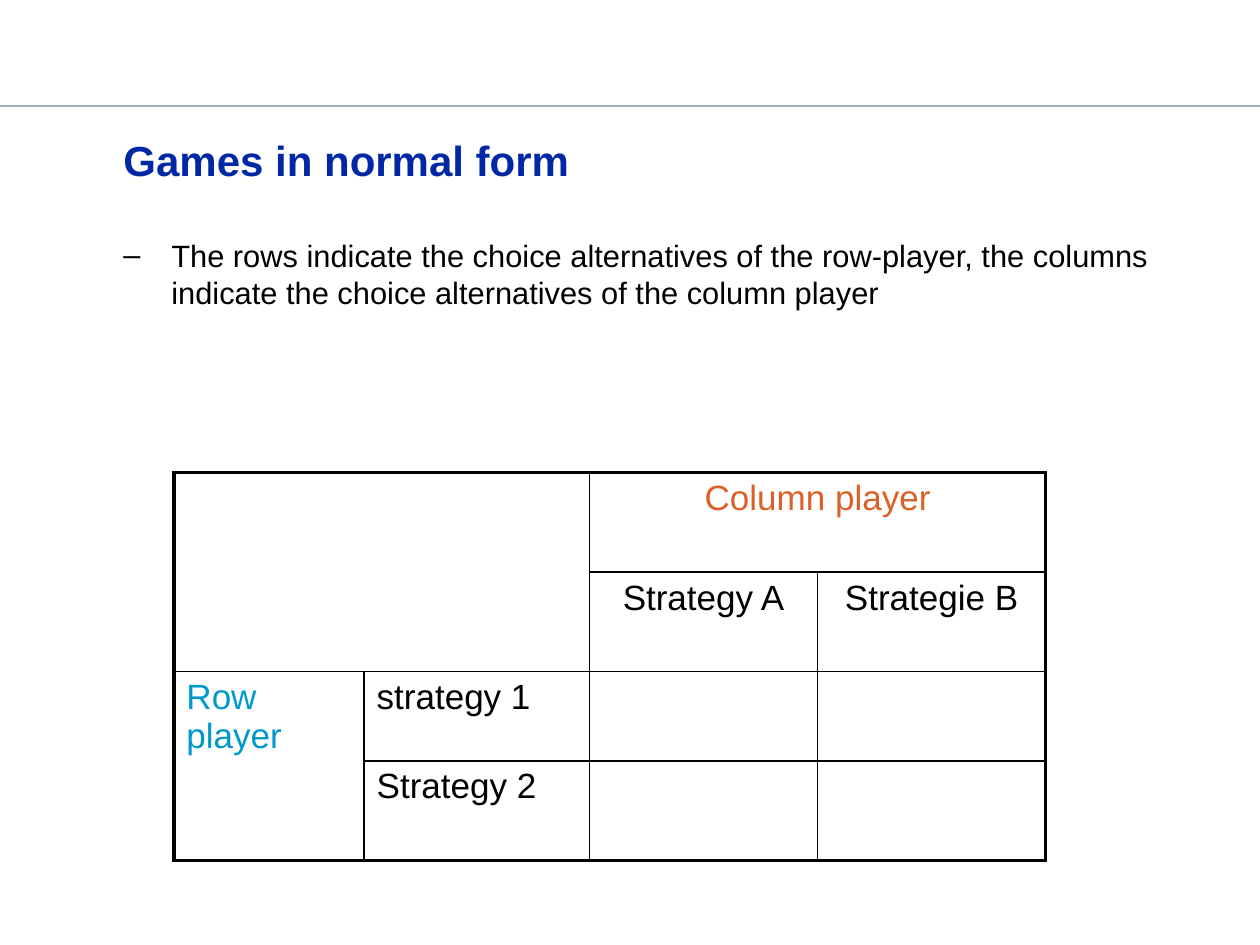
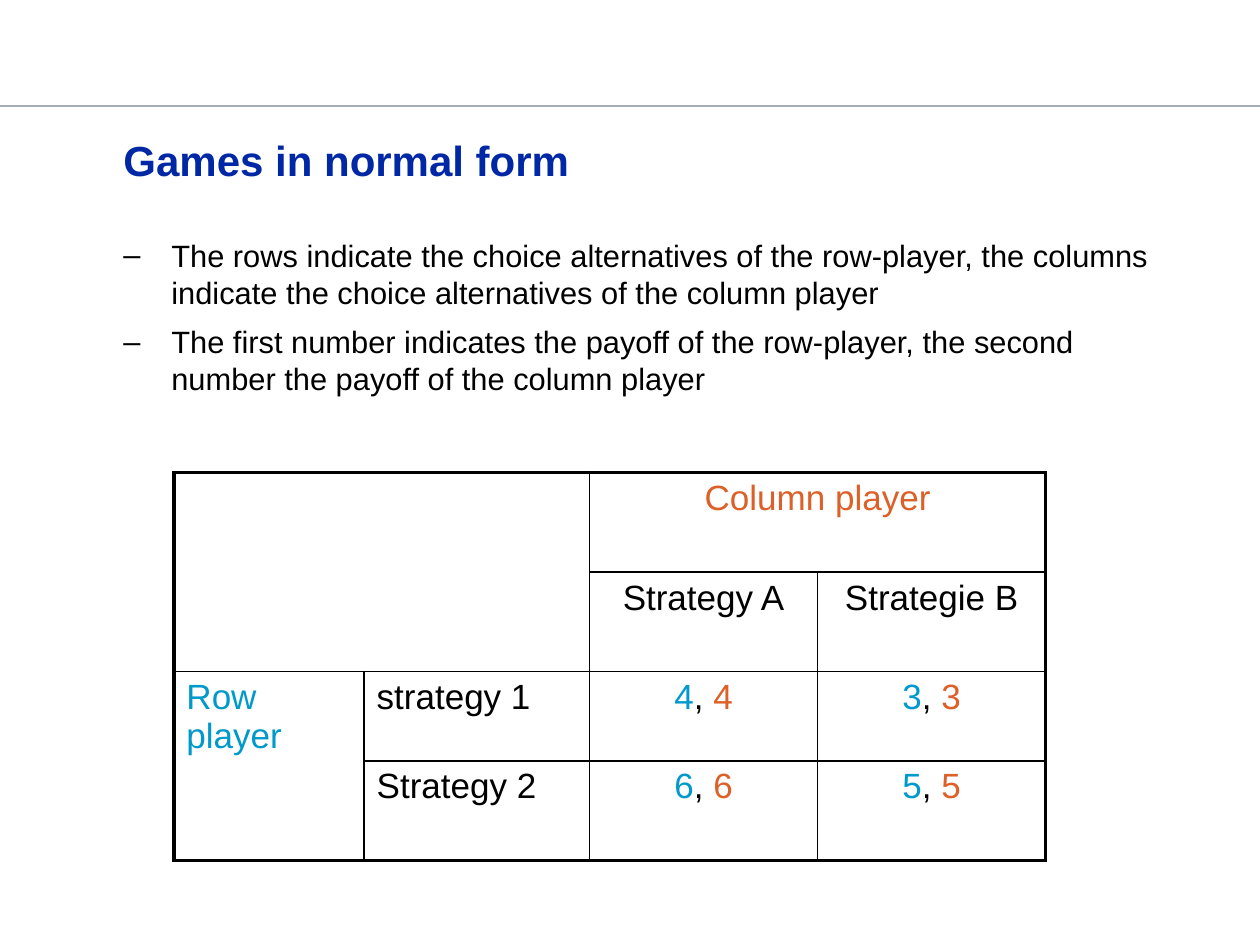
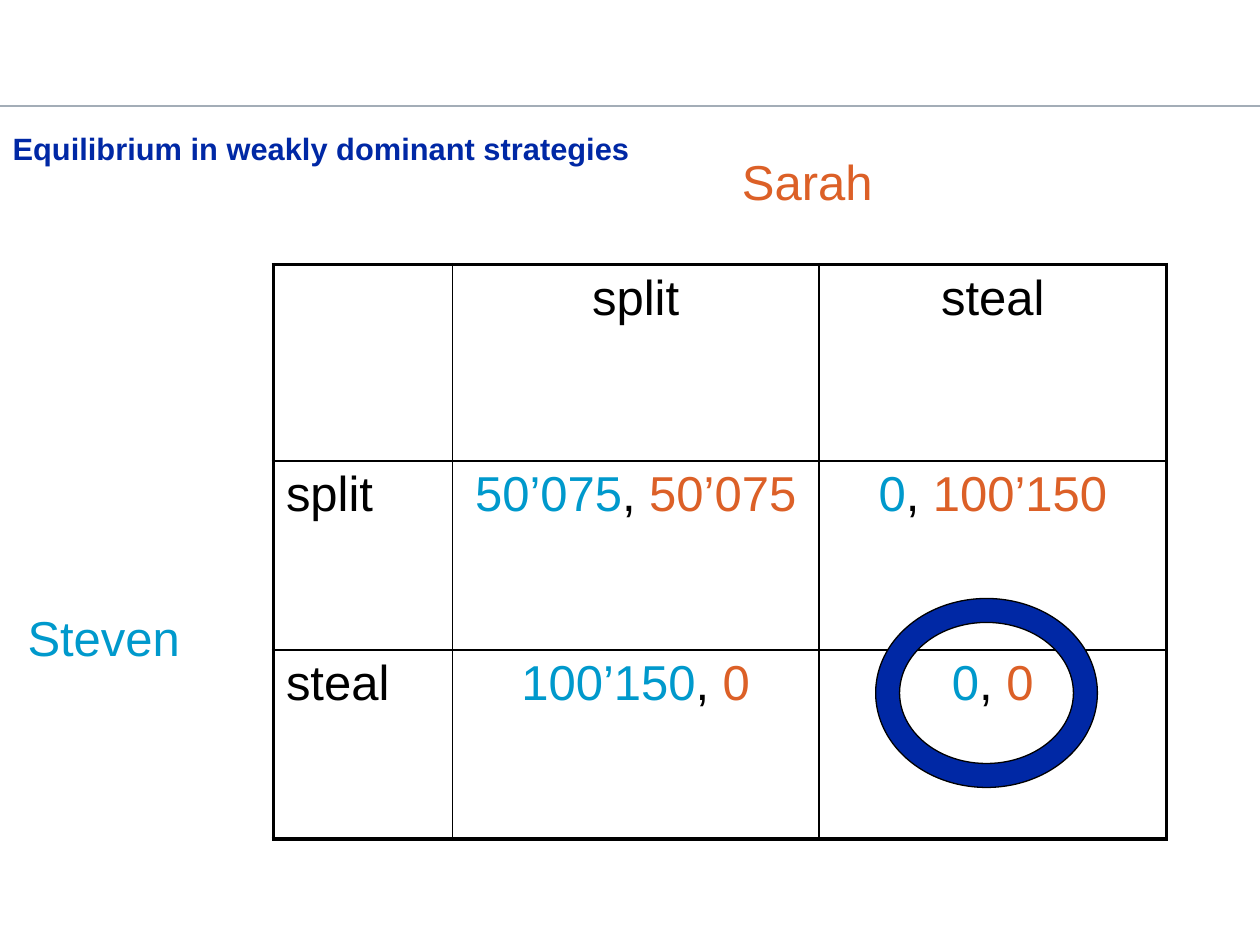
from lxml.etree import SubElement
from pptx import Presentation
from pptx.dml.color import RGBColor
from pptx.enum.shapes import MSO_CONNECTOR as Connector, MSO_SHAPE as Shape
from pptx.enum.text import MSO_ANCHOR as Anchor, MSO_AUTO_SIZE as AutoSize, PP_ALIGN as Align
from pptx.oxml import parse_xml
from pptx.oxml.ns import nsdecls, qn
from pptx.util import Inches, Pt

FONT = "Arial"
COLORS = {
    "title": "0028A5",
    "text": "000000",
    "row player": "0099CC",
    "column player": "DC6027",
    "rule": "A3ADB7",
}
TITLE_AND_BODY, TITLE_ONLY = 1, 5
OUTER_BORDER, INNER_BORDER = 2.25, 1


def rgb(name):
    return RGBColor.from_string(COLORS[name])


def add_text(paragraph, text, size=20, color="text", bold=False, align=Align.LEFT):
    """Add one formatted run to a paragraph."""
    paragraph.alignment = align
    run = paragraph.add_run()
    run.text = text
    run.font.name = FONT
    run.font.size = Pt(size)
    run.font.bold = bold
    run.font.color.rgb = rgb(color)


def add_payoffs(paragraph, payoffs, size):
    """Write the row player's payoff, then the column player's."""
    row_payoff, column_payoff = payoffs
    for text, color in ((row_payoff, "row player"), (", ", "text"), (column_payoff, "column player")):
        add_text(paragraph, text, size=size, color=color, align=Align.CENTER)


def set_borders(cell, widths):
    """Set the left, right, top and bottom border widths in points."""
    properties = cell._tc.get_or_add_tcPr()
    for index, (side, width) in enumerate(zip("LRTB", widths)):
        properties.insert(index, parse_xml(
            f'<a:ln{side} {nsdecls("a")} w="{Pt(width)}"><a:solidFill>'
            f'<a:srgbClr val="{COLORS["text"]}"/></a:solidFill></a:ln{side}>'))


class Deck:
    def __init__(self):
        self.presentation = Presentation()
        self.presentation.slide_width = Inches(10)
        self.presentation.slide_height = Inches(7.5)
        self.slide = None

    def new_slide(self, layout):
        layouts = self.presentation.slide_layouts
        self.slide = self.presentation.slides.add_slide(layouts[layout])
        rule = self.slide.shapes.add_connector(
            Connector.STRAIGHT, 0, Inches(0.84), Inches(10), Inches(0.84))
        rule.line.color.rgb = rgb("rule")
        rule.line.width = Pt(1.25)
        SubElement(rule._element.spPr, qn("a:effectLst"))

    def place(self, shape, left, top, width, height, margins=(0, 0, 0, 0)):
        """Position a text shape and return its top-anchored text frame."""
        shape.left, shape.top = Inches(left), Inches(top)
        shape.width, shape.height = Inches(width), Inches(height)
        frame = shape.text_frame
        frame.word_wrap = True
        frame.auto_size = AutoSize.NONE
        frame.vertical_anchor = Anchor.TOP
        (frame.margin_left, frame.margin_top,
         frame.margin_right, frame.margin_bottom) = map(Inches, margins)
        return frame

    def title(self, text, left=0.98, top=0.99, size=24):
        frame = self.place(self.slide.shapes.title, left, top, 8.03, 0.55, (0, 0.08, 0, 0))
        add_text(frame.paragraphs[0], text, size=size, color="title", bold=True)

    def bullets(self, items):
        frame = self.place(self.slide.placeholders[1], 0.98, 1.88, 8.17, 4.8)
        for index, item in enumerate(items):
            paragraph = frame.add_paragraph() if index else frame.paragraphs[0]
            properties = paragraph._p.get_or_add_pPr()
            properties.set("marL", str(Inches(0.38)))
            properties.set("indent", str(-Inches(0.38)))
            SubElement(properties, qn("a:buFont"), typeface=FONT)
            SubElement(properties, qn("a:buChar"), char="–")
            paragraph.space_before = Pt(7 if index else 0)
            add_text(paragraph, item, size=17.6)

    def label(self, text, left, top, width, color):
        box = self.slide.shapes.add_textbox(0, 0, 0, 0)
        frame = self.place(box, left, top, width, 0.57, (0.1, 0.05, 0.1, 0.05))
        add_text(frame.paragraphs[0], text, size=28, color=color)

    def table(self, left, top, widths, heights, rows, size, label_columns, merges=(), colors=None):
        """Draw a payoff matrix; a tuple in rows is a pair of payoffs."""
        row_count, column_count = len(heights), len(widths)
        table = self.slide.shapes.add_table(
            row_count, column_count, Inches(left), Inches(top),
            Inches(sum(widths)), Inches(sum(heights))).table
        table.first_row = table.horz_banding = False
        for column, width in zip(table.columns, widths):
            column.width = Inches(width)
        for row, height in zip(table.rows, heights):
            row.height = Inches(height)
        for first, last in merges:
            table.cell(*first).merge(table.cell(*last))

        for r, values in enumerate(rows):
            for c, value in enumerate(values):
                cell = table.cell(r, c)
                cell.fill.background()
                if cell.is_spanned:
                    continue
                at_edges = (c == 0, c + cell.span_width == column_count,
                            r == 0, r + cell.span_height == row_count)
                set_borders(cell, [OUTER_BORDER if edge else INNER_BORDER for edge in at_edges])
                paragraph = cell.text_frame.paragraphs[0]
                if isinstance(value, tuple):
                    add_payoffs(paragraph, value, size)
                elif value:
                    add_text(paragraph, value, size=size,
                             color=(colors or {}).get(value, "text"),
                             align=Align.LEFT if c < label_columns else Align.CENTER)

    def ring(self, left, top, width, height, thickness):
        ring = self.slide.shapes.add_shape(
            Shape.DONUT, Inches(left), Inches(top), Inches(width), Inches(height))
        ring.adjustments[0] = thickness / min(width, height)
        ring.shadow.inherit = False
        ring.fill.solid()
        ring.fill.fore_color.rgb = rgb("title")
        ring.line.color.rgb = rgb("text")
        ring.line.width = Pt(0.75)

    def normal_form(self, items, payoffs):
        """Slide that explains the matrix of a two-player game."""
        self.new_slide(TITLE_AND_BODY)
        self.title("Games in normal form")
        self.bullets(items)
        self.table(
            1.38, 3.75, [1.51, 1.79, 1.81, 1.81], [0.79, 0.79, 0.71, 0.79],
            [["", "", "Column player", ""],
             ["", "", "Strategy A", "Strategie B"],
             ["Row player", "strategy 1", *payoffs[0]],
             ["", "Strategy 2", *payoffs[1]]],
            size=20, label_columns=2,
            merges=[((0, 0), (1, 1)), ((0, 2), (0, 3)), ((2, 0), (3, 0))],
            colors={"Row player": "row player", "Column player": "column player"})


def main():
    deck = Deck()

    # Slides 1 and 2: the matrix without and with payoffs
    alternatives = ("The rows indicate the choice alternatives of the row-player, "
                    "the columns indicate the choice alternatives of the column player")
    numbers = ("The first number indicates the payoff of the row-player, "
               "the second number the payoff of the column player")
    deck.normal_form([alternatives], [["", ""], ["", ""]])
    deck.normal_form([alternatives, numbers],
                     [[("4", "4"), ("3", "3")], [("6", "6"), ("5", "5")]])

    # Slide 3: split or steal, with the equilibrium ringed
    deck.new_slide(TITLE_ONLY)
    deck.title("Equilibrium in weakly dominant strategies", left=0.1, top=0.95, size=17.6)
    deck.table(
        2.17, 2.1, [1.42, 2.91, 2.76], [1.56, 1.5, 1.5],
        [["", "split", "steal"],
         ["split", ("50’075", "50’075"), ("0", "100’150")],
         ["steal", ("100’150", "0"), ("0", "0")]],
        size=28, label_columns=1)
    deck.label("Steven", 0.12, 4.77, 1.49, "row player")
    deck.label("Sarah", 5.79, 1.15, 1.57, "column player")
    deck.ring(6.95, 4.75, 1.76, 1.5, thickness=0.19)

    deck.presentation.save("out.pptx")


if __name__ == "__main__":
    main()
